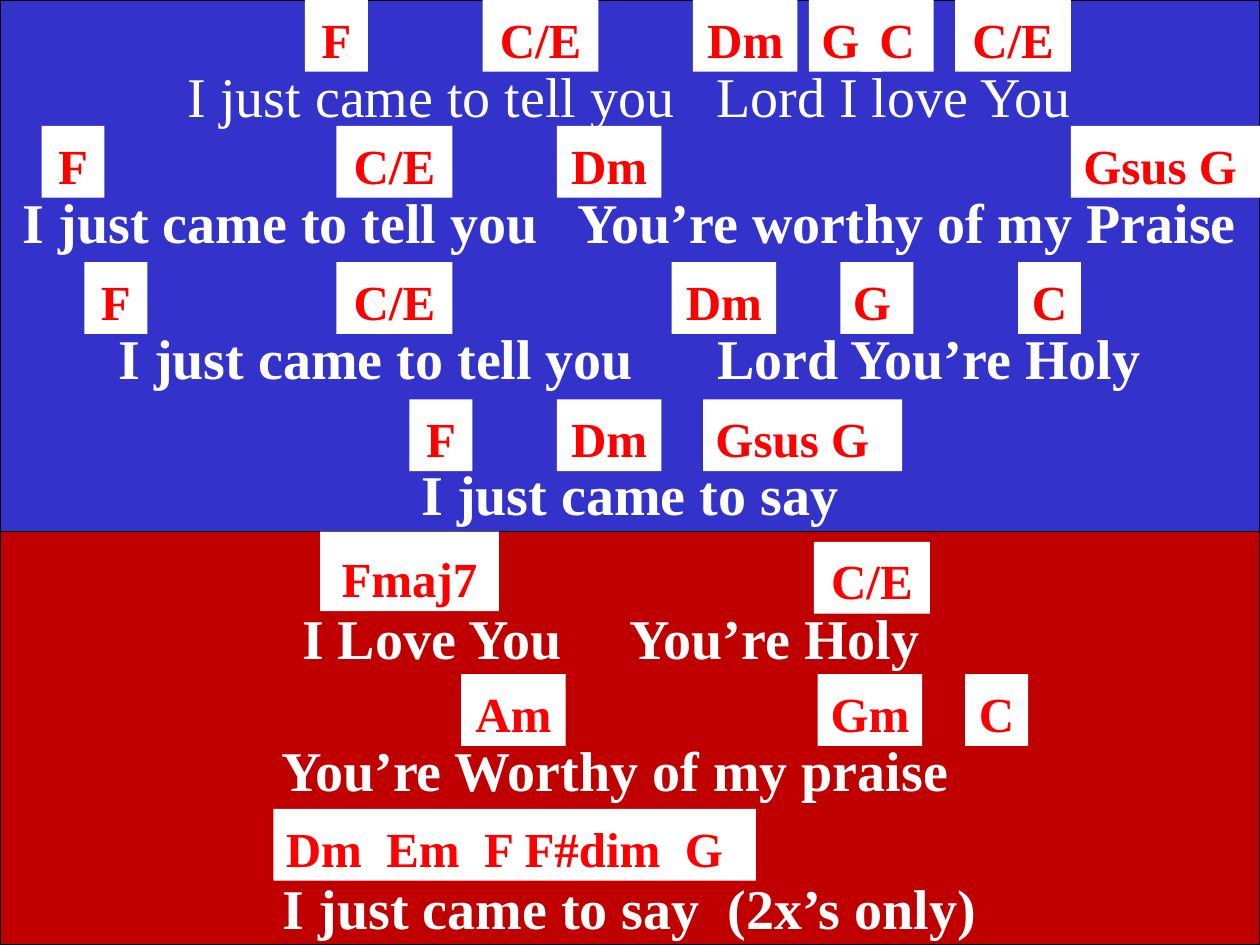
from pptx import Presentation
from pptx.dml.color import RGBColor
from pptx.enum.shapes import MSO_SHAPE
from pptx.enum.text import MSO_ANCHOR, PP_ALIGN
from pptx.util import Inches, Pt

RECT = MSO_SHAPE.RECTANGLE
BOTTOM = MSO_ANCHOR.BOTTOM
LEFT, CENTER = PP_ALIGN.LEFT, PP_ALIGN.CENTER

BLUE = RGBColor(0x33, 0x33, 0xCC)
DARK_RED = RGBColor(0xC0, 0x00, 0x00)
RED = RGBColor(0xFF, 0x00, 0x00)
WHITE = RGBColor(0xFF, 0xFF, 0xFF)
BLACK = RGBColor(0x00, 0x00, 0x00)

FONT = "Times New Roman"
WIDTH, HEIGHT = 10, 7.5
VERSE_HEIGHT = 4.22
LYRIC_HEIGHT, CHORD_HEIGHT = 0.63, 0.57

# Box width of each chord name
CHORD_WIDTHS = {"F": 0.5, "C": 0.5, "G": 0.58, "C/E": 0.92, "Dm": 0.83,
                "Am": 0.83, "Gm": 0.83, "Gsus G": 1.5, "Fmaj7": 1.42,
                "Dm  Em  F F#dim  G": 3.83}
LEFT_ALIGNED = {"G", "Gsus G", "Dm  Em  F F#dim  G"}

# Lyric lines: left, top, bold, words
LYRICS = [
    (0, 0.42, False, "I just came to tell you   Lord I love You"),
    (0, 1.42, True, "I just came to tell you   You’re worthy of my Praise"),
    (0, 2.5, True, "I just came to tell you      Lord You’re Holy"),
    (0, 3.58, True, "I just came to say"),
    (-0.15, 4.72, True, "I Love You     You’re Holy"),
    (-0.12, 5.77, True, "You’re Worthy of my praise"),
    (0, 6.87, True, "I just came to say  (2x’s only)"),
]

# Chord rows: top, then the left edge and name of each chord
CHORD_ROWS = [
    (0, [(2.42, "F"), (3.83, "C/E"), (5.5, "Dm"), (6.42, "G"), (6.83, "C"),
         (7.58, "C/E")]),
    (1, [(0.33, "F"), (2.67, "C/E"), (4.42, "Dm"), (8.5, "Gsus G")]),
    (2.08, [(0.67, "F"), (2.67, "C/E"), (5.33, "Dm"), (6.67, "G"), (8.08, "C")]),
    (3.17, [(3.25, "F"), (4.42, "Dm"), (5.58, "Gsus G")]),
    (VERSE_HEIGHT, [(2.54, "Fmaj7")]),
    (4.3, [(6.46, "C/E")]),
    (5.35, [(3.66, "Am"), (6.49, "Gm"), (7.66, "C")]),
    (6.42, [(2.17, "Dm  Em  F F#dim  G")]),
]
# Boxes that differ from the usual size, by top and left: width, height
SPECIAL_SIZES = {(0, 6.83): (0.58, CHORD_HEIGHT),
                 (3.17, 5.58): (1.58, CHORD_HEIGHT),
                 (VERSE_HEIGHT, 2.54): (1.42, 0.63)}


def write(shape, text, align, **font):
    tf = shape.text_frame
    side = 0.1 if align == LEFT else 0.05
    frame = {"word_wrap": True, "vertical_anchor": BOTTOM,
             "margin_left": Inches(side), "margin_right": Inches(0.05),
             "margin_top": 0, "margin_bottom": Inches(0.03)}
    for name, value in frame.items():
        setattr(tf, name, value)
    p = tf.paragraphs[0]
    p.alignment = align
    r = p.add_run()
    r.text = text
    color = font.pop("color")
    for name, value in {"name": FONT, **font}.items():
        setattr(r.font, name, value)
    r.font.color.rgb = color


def add_rect(s, left, top, width, height, fill, line=None):
    sp = s.shapes.add_shape(RECT, *map(Inches, (left, top, width, height)))
    sp.shadow.inherit = False
    sp.fill.solid()
    sp.fill.fore_color.rgb = fill
    if line is None:
        sp.line.fill.background()
    else:
        sp.line.color.rgb = line
        sp.line.width = Pt(0.75)
    return sp


def add_lyric(s, left, top, bold, text):
    box = s.shapes.add_textbox(*map(Inches, (left, top, WIDTH, LYRIC_HEIGHT)))
    write(box, text, CENTER, size=Pt(32), bold=bold, color=WHITE)


def add_chord(s, left, top, name):
    usual = (CHORD_WIDTHS[name], CHORD_HEIGHT)
    width, height = SPECIAL_SIZES.get((top, left), usual)
    sp = add_rect(s, left, top, width, height, WHITE)
    align = LEFT if name in LEFT_ALIGNED else CENTER
    write(sp, name, align, size=Pt(28), bold=True, color=RED)


def main():
    prs = Presentation()
    prs.slide_width, prs.slide_height = Inches(WIDTH), Inches(HEIGHT)
    s = prs.slides.add_slide(prs.slide_layouts[6])

    # Chorus and verse panels
    add_rect(s, 0, VERSE_HEIGHT, WIDTH, HEIGHT - VERSE_HEIGHT, DARK_RED, BLACK)
    add_rect(s, 0, 0, WIDTH, VERSE_HEIGHT, BLUE, BLACK)

    # Lyrics with the chords above them
    for lyric in LYRICS:
        add_lyric(s, *lyric)
    for top, chords in CHORD_ROWS:
        for left, name in chords:
            add_chord(s, left, top, name)

    prs.save("out.pptx")


if __name__ == "__main__":
    main()
